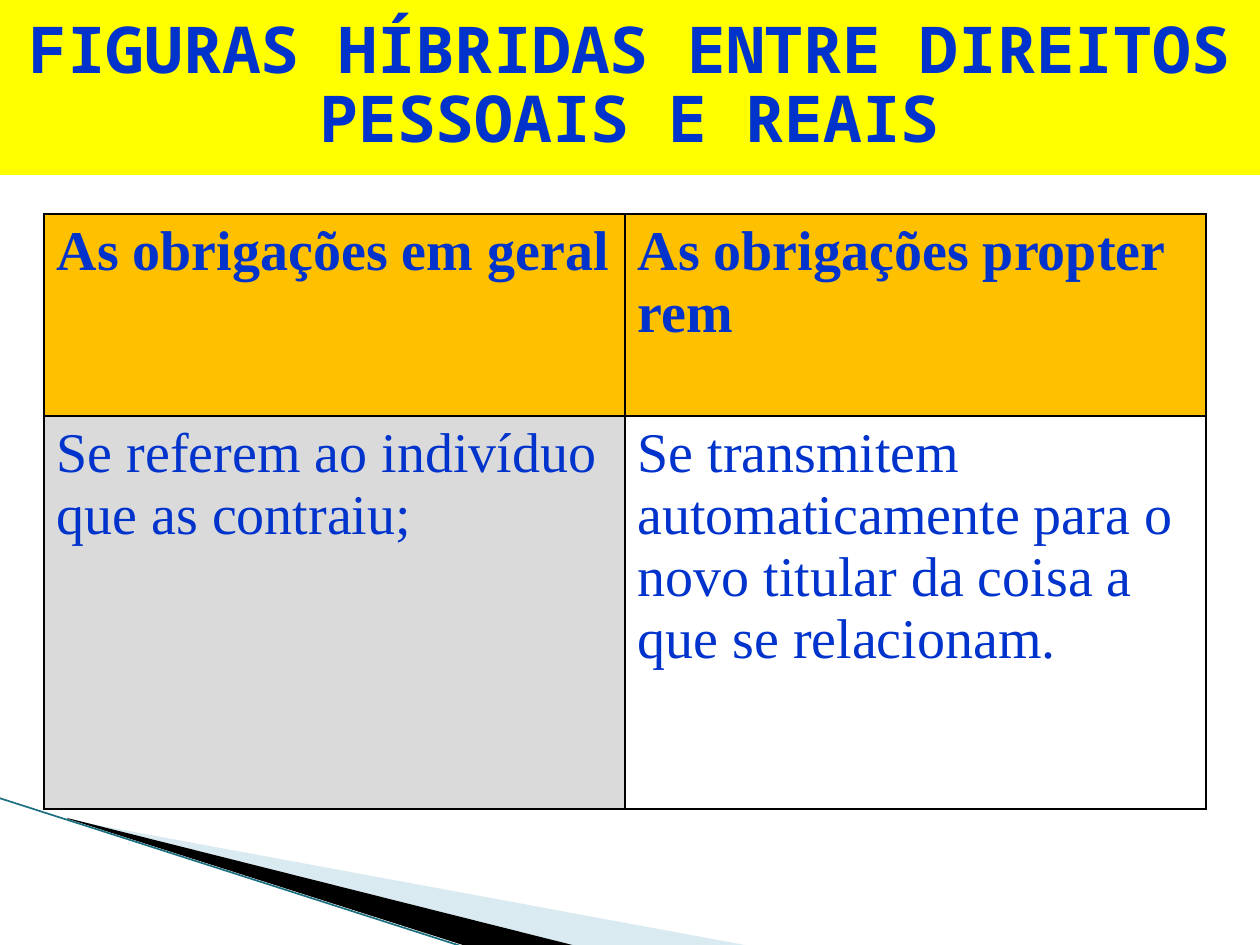
from dataclasses import dataclass

from lxml import etree
from pptx import Presentation
from pptx.dml.color import RGBColor
from pptx.enum import shapes, text
from pptx.oxml import parse_xml
from pptx.oxml.ns import qn
from pptx.util import Pt

EMU_PER_PX = 914400 / 126
A_NS = 'xmlns:a="http://schemas.openxmlformats.org/drawingml/2006/main"'


@dataclass(frozen=True)
class Theme:
    ink: str = "0033CC"
    banner: str = "FFFF00"
    header: str = "FFC000"
    shaded: str = "DADADA"
    plain: str = "FFFFFF"
    border: str = "000000"
    pale_wedge: str = "A0CBDC"
    dark_wedge: str = "000000"
    edge: str = "1A7080"
    title_font: str = "Noto Sans Mono"
    body_font: str = "Times New Roman"
    title_size: float = 36.9
    body_size: float = 32


THEME = Theme()


def px(length):
    return round(length * EMU_PER_PX)


def paint(fill, color):
    fill.solid()
    fill.fore_color.rgb = RGBColor.from_string(color)


def style_font(font, name, size, bold):
    values = {"name": name, "size": Pt(size), "bold": bold}
    for attribute, value in values.items():
        setattr(font, attribute, value)
    font.color.rgb = RGBColor.from_string(THEME.ink)


def add_wedge(slide, points, color, opacity=100):
    builder = slide.shapes.build_freeform(*points[0], scale=EMU_PER_PX)
    builder.add_line_segments(points[1:], close=True)
    wedge = builder.convert_to_shape()
    wedge.shadow.inherit = False
    wedge.line.fill.background()
    paint(wedge.fill, color)
    if opacity < 100:
        tint = wedge.fill._xPr.find(".//" + qn("a:srgbClr"))
        etree.SubElement(tint, qn("a:alpha"), val=str(opacity * 1000))


def add_edge(slide, start, end):
    edge = slide.shapes.add_connector(
        shapes.MSO_CONNECTOR.STRAIGHT, *map(px, start + end))
    edge.line.width = Pt(0.95)
    edge.line.color.rgb = RGBColor.from_string(THEME.edge)
    etree.SubElement(edge._element.spPr, qn("a:effectLst"))


def set_borders(cell):
    properties = cell._tc.get_or_add_tcPr()
    for position, side in enumerate(("lnL", "lnR", "lnT", "lnB")):
        properties.insert(position, parse_xml(
            f'<a:{side} {A_NS} w="12700"><a:solidFill>'
            f'<a:srgbClr val="{THEME.border}"/></a:solidFill></a:{side}>'))


def add_comparison(slide, left, top, column_width, row_heights, rows):
    columns = len(rows[0])
    comparison = slide.shapes.add_table(
        len(rows), columns, px(left), px(top),
        px(column_width * columns), px(sum(row_heights))).table
    for column in comparison.columns:
        column.width = px(column_width)
    for r, (height, row) in enumerate(zip(row_heights, rows)):
        comparison.rows[r].height = px(height)
        for c, (wording, color) in enumerate(row):
            cell = comparison.cell(r, c)
            cell.text = wording
            run = cell.text_frame.paragraphs[0].runs[0]
            style_font(run.font, THEME.body_font, THEME.body_size, r == 0)
            paint(cell.fill, color)
            set_borders(cell)


def set_title(slide, wording, width, height):
    title = slide.shapes.title
    # Bring the banner in front of the other parts
    title.element.getparent().append(title.element)
    box = {"left": 0, "top": 0, "width": px(width), "height": px(height)}
    for attribute, value in box.items():
        setattr(title, attribute, value)
    paint(title.fill, THEME.banner)
    frame = title.text_frame
    frame.text = wording
    frame.word_wrap = True
    frame.auto_size = text.MSO_AUTO_SIZE.NONE
    frame.vertical_anchor = text.MSO_ANCHOR.MIDDLE
    heading = frame.paragraphs[0]
    heading.alignment = text.PP_ALIGN.CENTER
    heading.line_spacing = 0.88
    style_font(heading.runs[0].font, THEME.title_font, THEME.title_size, True)


def main():
    deck = Presentation()
    deck.slide_width, deck.slide_height = px(1260), px(945)
    slide = deck.slides.add_slide(deck.slide_layouts[5])
    paint(slide.background.fill, THEME.plain)

    # Corner decoration
    add_wedge(slide, [(69, 820), (750, 946), (575, 946), (69, 819)],
              THEME.pale_wedge, opacity=40)
    add_wedge(slide, [(67, 818), (576, 946), (469, 947), (68, 819)],
              THEME.dark_wedge)
    add_edge(slide, (-1, 798), (467, 948))

    # Comparison of the two kinds of obligation
    add_comparison(slide, 44, 214, 581, (202, 393), [
        [("As obrigações em geral", THEME.header),
         ("As obrigações propter rem", THEME.header)],
        [("Se referem ao indivíduo que as contraiu;", THEME.shaded),
         ("Se transmitem automaticamente para o novo titular da coisa "
          "a que se relacionam.", THEME.plain)],
    ])

    # Title banner
    set_title(slide, "FIGURAS HÍBRIDAS ENTRE DIREITOS PESSOAIS E REAIS",
              1260, 175)
    deck.save("out.pptx")


if __name__ == "__main__":
    main()
